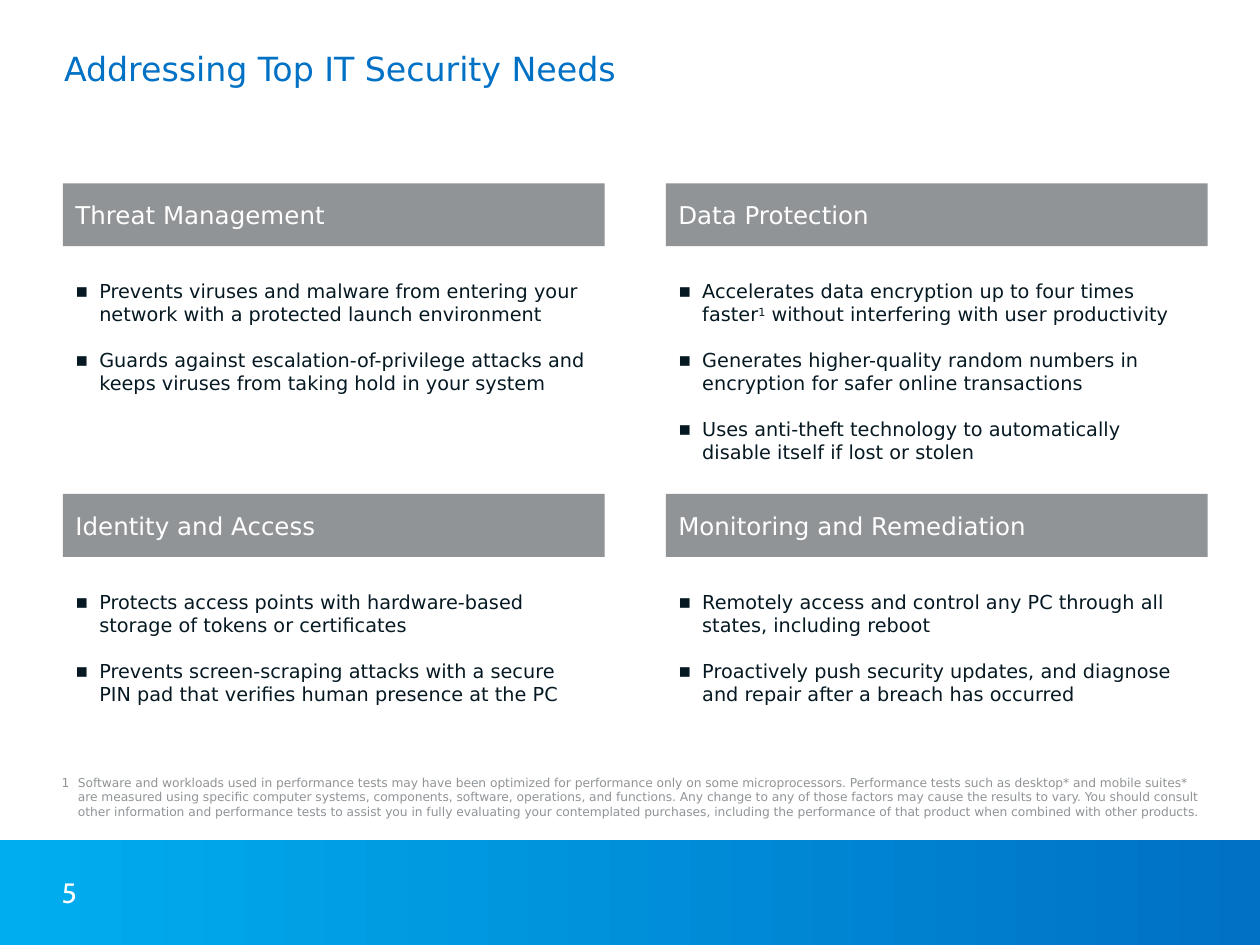
from lxml import etree
from pptx import Presentation
from pptx import util as u
from pptx.dml.color import RGBColor
from pptx.enum import shapes, text
from pptx.oxml.ns import qn

COLS, ROWS = 20, 15  # half-inch grid
FONT = "DejaVu Sans"
BLUE, CYAN, GREY, INK, WHITE = "0071C5", "00AEEF", "909497", "061922", "FFFFFF"

PANELS = [
    [("Threat Management", [
        "Prevents viruses and malware from entering your network with a protected launch environment",
        "Guards against escalation-of-privilege attacks and keeps viruses from taking hold in your system"]),
     ("Data Protection", [
         "Accelerates data encryption up to four times faster^1^ without interfering with user productivity",
         "Generates higher-quality random numbers in encryption for safer online transactions",
         "Uses anti-theft technology to automatically disable itself if lost or stolen"])],
    [("Identity and Access", [
        "Protects access points with hardware-based storage of tokens or certificates",
        "Prevents screen-scraping attacks with a secure PIN pad that verifies human presence at the PC"]),
     ("Monitoring and Remediation", [
         "Remotely access and control any PC through all states, including reboot",
         "Proactively push security updates, and diagnose and repair after a breach has occurred"])],
]
NOTE = (
    "1\tSoftware and workloads used in performance tests may have been optimized for performance only "
    "on some microprocessors. Performance tests such as desktop* and mobile suites*\v"
    "are measured using specific computer systems, components, software, operations, and functions. "
    "Any change to any of those factors may cause the results to vary. You should consult "
    "other information and performance tests to assist you in fully evaluating your contemplated "
    "purchases, including the performance of that product when combined with other products.")

prs = Presentation()
prs.slide_width, prs.slide_height = u.Inches(10), u.Inches(7.5)
s = prs.slides.add_slide(prs.slide_layouts[6])


def rgb(code):
    return RGBColor.from_string(code)


def place(x, y, w, h):
    """Turn grid columns and rows into slide lengths."""
    cw, rh = prs.slide_width / COLS, prs.slide_height / ROWS
    return [int(v) for v in (x * cw, y * rh, w * cw, h * rh)]


def add_bar(box):
    sp = s.shapes.add_shape(shapes.MSO_SHAPE.RECTANGLE, *place(*box))
    sp.shadow.inherit = False
    sp.line.fill.background()
    return sp


def write(sp, content, size, color, font=FONT, anchor="TOP", wrap=True,
          hang=0, bullet=None, gap=0):
    """Fill a shape with paragraphs; ^ marks switch superscript on and off."""
    tf = sp.text_frame
    tf.word_wrap = wrap
    tf.vertical_anchor = getattr(text.MSO_ANCHOR, anchor)
    for i, line in enumerate([content] if isinstance(content, str) else content):
        p = tf.add_paragraph() if i else tf.paragraphs[0]
        p.alignment = text.PP_ALIGN.LEFT
        if i:
            p.space_before = u.Pt(gap)
        if hang:
            pr = p._p.get_or_add_pPr()
            pr.set("marL", str(u.Inches(hang)))
            pr.set("indent", str(-u.Inches(hang)))
            if bullet:
                etree.SubElement(pr, qn("a:buFont")).set("typeface", font)
                etree.SubElement(pr, qn("a:buChar")).set("char", bullet)
        for n, part in enumerate(line.split("^")):
            for k, piece in enumerate(part.split("\v")):
                if k:
                    p.add_line_break()
                r = p.add_run()
                r.text = piece
                r.font.size, r.font.name = u.Pt(size), font
                r.font.color.rgb = rgb(color)
                if n % 2:
                    r._r.get_or_add_rPr().set("baseline", "30000")


def label(box, content, **fmt):
    write(s.shapes.add_textbox(*place(*box)), content, **fmt)


def panel(x, y, w, h, heading, points):
    """Heading bar one row high with a bulleted list below it."""
    bar = add_bar((x, y, w, 1))
    bar.fill.solid()
    bar.fill.fore_color.rgb = rgb(GREY)
    write(bar, heading, size=14, color=WHITE, anchor="MIDDLE")
    label((x, y + 1.43, w, h - 1.43), points, size=11, color=INK,
          hang=0.19, bullet="▪", gap=12.8)


def footer(x, y, w, h, number):
    """Gradient band with the slide number."""
    band = add_bar((x, y, w, h))
    band.fill.gradient()
    band.fill.gradient_angle = 0
    for stop, color, pos in zip(band.fill.gradient_stops, (CYAN, BLUE), (0, 1)):
        stop.color.rgb = rgb(color)
        stop.position = pos
    label((x + 0.78, y + 0.62, 0.94, 0.42), number, size=16, color=WHITE,
          font="Cabin", anchor="MIDDLE", wrap=False)


# Footer band and title
footer(0, 13.34, COLS, 1.66, "5")
label((0.82, 0.67, 18.18, 1), "Addressing Top IT Security Needs", size=19, color=BLUE)

# Two by two panels
for top, row in zip((2.91, 7.84), PANELS):
    for left, (heading, points) in zip((1, 10.57), row):
        panel(left, top, 8.6, 4.9 if len(points) > 2 else 3.5, heading, points)

# Footnote
label((0.78, 12.2, 19, 0.9), NOTE, size=7, color=GREY, hang=0.13)

prs.save("out.pptx")
